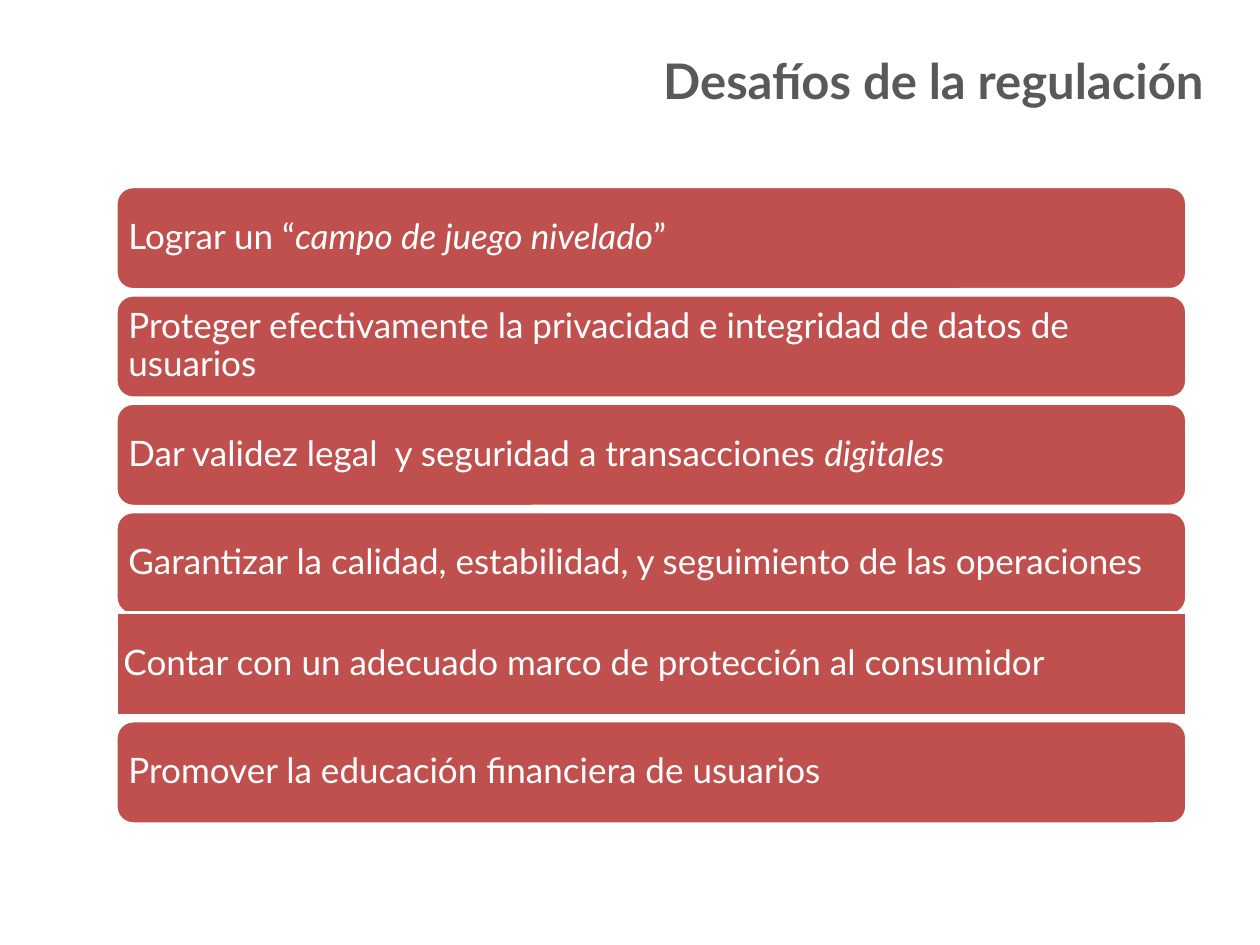
"""Build the slide on regulatory challenges as a stack of six bars."""
import dataclasses

import pptx
import pptx.dml.color
import pptx.enum.shapes
import pptx.enum.text
import pptx.util

Inches = pptx.util.Inches
Shape = pptx.enum.shapes.MSO_SHAPE


@dataclasses.dataclass(frozen=True)
class Theme:
    font: str = "Lato"
    title_size: int = 28
    bar_size: int = 20
    title_color: str = "595959"
    bar_color: str = "C0504D"
    light: str = "FFFFFF"


@dataclasses.dataclass(frozen=True)
class Grid:
    left: float = 0.92
    top: float = 1.48
    width: float = 8.5
    height: float = 0.82
    pitch: float = 0.86

    def row_top(self, row: int) -> float:
        return self.top + row * self.pitch


@dataclasses.dataclass(frozen=True)
class Span:
    text: str
    italic: bool = False


@dataclasses.dataclass(frozen=True)
class Challenge:
    spans: tuple[Span, ...]
    outline: Shape = Shape.ROUNDED_RECTANGLE
    shift: float = 0


THEME = Theme()
GRID = Grid()
LOWER_SHIFT = -0.06
CHALLENGES = (
    Challenge((Span("Lograr un “"), Span("campo de juego nivelado", True), Span("”"))),
    Challenge((Span("Proteger efectivamente la privacidad e integridad de datos de usuarios"),)),
    Challenge((Span("Dar validez legal  y seguridad a transacciones "), Span("digitales", True))),
    Challenge((Span("Garantizar la calidad, estabilidad, y seguimiento de las operaciones"),)),
    Challenge((Span("Contar con un adecuado marco de protección al consumidor"),),
              Shape.RECTANGLE, LOWER_SHIFT),
    Challenge((Span("Promover la educación financiera de usuarios"),), shift=LOWER_SHIFT),
)


def rgb(value: str) -> pptx.dml.color.RGBColor:
    return pptx.dml.color.RGBColor.from_string(value)


def style_font(font, size: int, color: str) -> None:
    font.name = THEME.font
    font.size = pptx.util.Pt(size)
    font.color.rgb = rgb(color)


def draw_title(page, text: str) -> None:
    box = page.shapes.add_textbox(Inches(1.75), Inches(0.35), Inches(7.9), Inches(0.57))
    box.text_frame.word_wrap = True
    box.text_frame.text = text
    para = box.text_frame.paragraphs[0]
    para.alignment = pptx.enum.text.PP_ALIGN.RIGHT
    font = para.runs[0].font
    style_font(font, THEME.title_size, THEME.title_color)
    font.bold = True


def draw_bar(page, row: int, challenge: Challenge) -> None:
    bar = page.shapes.add_shape(
        challenge.outline, Inches(GRID.left), Inches(GRID.row_top(row) + challenge.shift),
        Inches(GRID.width), Inches(GRID.height))
    bar.shadow.inherit = False
    bar.fill.solid()
    bar.fill.fore_color.rgb = rgb(THEME.bar_color)
    bar.line.color.rgb = rgb(THEME.light)
    bar.line.width = pptx.util.Pt(2)
    frame = bar.text_frame
    frame.word_wrap = True
    frame.vertical_anchor = pptx.enum.text.MSO_ANCHOR.MIDDLE
    frame.margin_left = frame.margin_right = Inches(0.06)
    frame.margin_top = frame.margin_bottom = Inches(0.06)
    para = frame.paragraphs[0]
    para.alignment = pptx.enum.text.PP_ALIGN.LEFT
    para.line_spacing = 0.9
    for span in challenge.spans:
        run = para.add_run()
        run.text = span.text
        style_font(run.font, THEME.bar_size, THEME.light)
        run.font.italic = span.italic


def main() -> None:
    deck = pptx.Presentation()
    deck.slide_width, deck.slide_height = Inches(10), Inches(7.5)
    page = deck.slides.add_slide(deck.slide_layouts[6])
    draw_title(page, "Desafíos de la regulación")
    for row, challenge in enumerate(CHALLENGES):
        draw_bar(page, row, challenge)
    deck.save("out.pptx")


if __name__ == "__main__":
    main()
